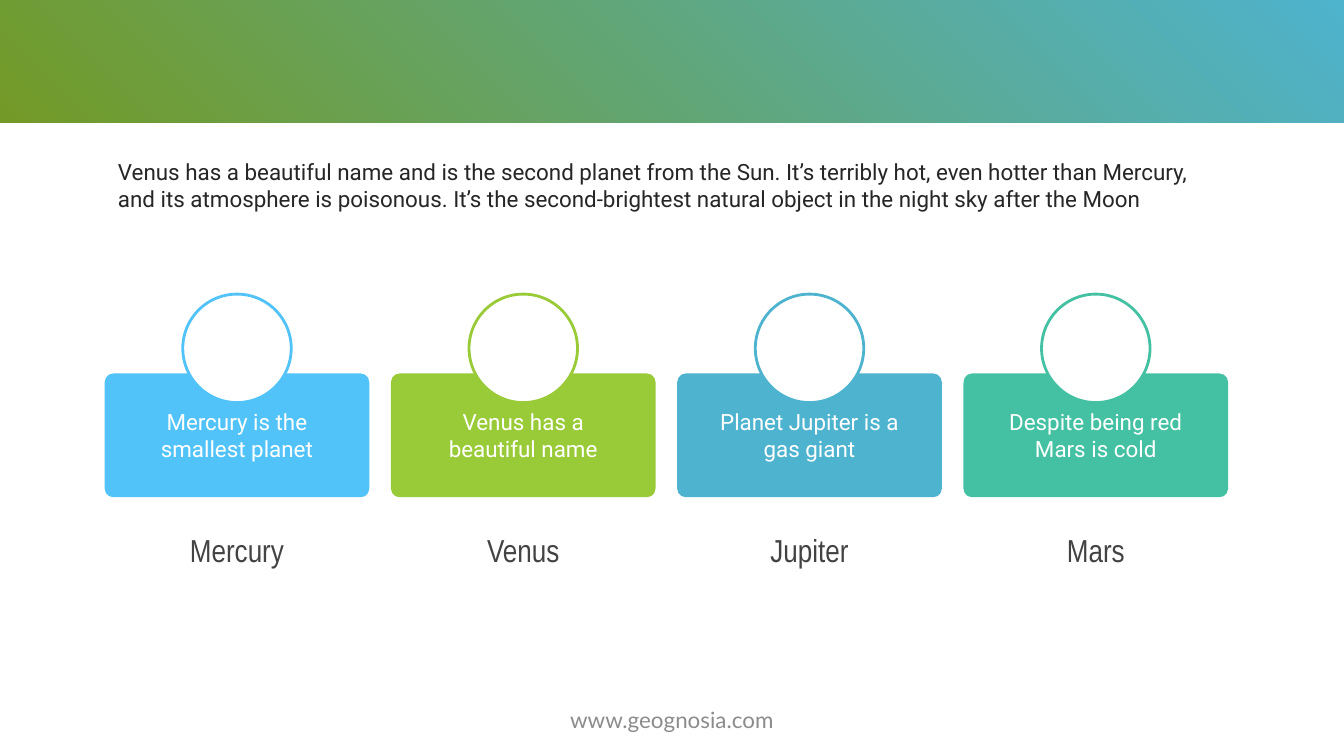
from pptx import Presentation
from pptx.dml.color import RGBColor
from pptx.enum import shapes, text
from pptx.util import Cm, Pt

WHITE = RGBColor(0xFF, 0xFF, 0xFF)
INK = RGBColor(0x26, 0x26, 0x26)
SLATE = RGBColor(0x43, 0x43, 0x43)
GREY = RGBColor(0x8C, 0x8C, 0x8C)
OLIVE = RGBColor(0x73, 0x9A, 0x28)
SKY = RGBColor(0x51, 0xC3, 0xF9)
LIME = RGBColor(0x99, 0xCB, 0x38)
BLUE = RGBColor(0x4E, 0xB3, 0xCF)
TEAL = RGBColor(0x44, 0xC1, 0xA3)

# Content
INTRO = ("Venus has a beautiful name and is the second planet from the Sun. "
         "It’s terribly hot, even hotter than Mercury, and its atmosphere is "
         "poisonous. It’s the second-brightest natural object in the night sky "
         "after the Moon")
PLANETS = [
    ("Mercury", "Mercury is the smallest planet", SKY),
    ("Venus", "Venus has a beautiful name", LIME),
    ("Jupiter", "Planet Jupiter is a gas giant", BLUE),
    ("Mars", "Despite being red Mars is cold", TEAL),
]
SITE = "www.geognosia.com"

# Text formats
BODY = dict(name="Roboto", size=Pt(12))
TITLE = dict(name="Arial Narrow", size=Pt(17))
FOOTER = dict(name="Lato", size=Pt(12))

# Layout in centimetres
LEFT, PITCH = 1.98, 5.41
CARD_W, CARD_H, CARD_TOP = 5, 2.34, 7.06
CIRCLE, CIRCLE_TOP = 2.05, 5.56
LABEL_W, LABEL_H, LABEL_TOP = 4.42, 1.19, 9.8

prs = Presentation()
prs.slide_width, prs.slide_height = Cm(25.4), Cm(14.29)
slide = prs.slides.add_slide(prs.slide_layouts[6])


def add_preset(preset, left, top, width, height):
    shape = slide.shapes.add_shape(preset, Cm(left), Cm(top), Cm(width), Cm(height))
    shape.shadow.inherit = False
    return shape


def write(shape, words, font, color, side=0.25, align=text.PP_ALIGN.CENTER):
    frame = shape.text_frame
    settings = dict(word_wrap=True, vertical_anchor=text.MSO_ANCHOR.MIDDLE,
                    margin_left=Cm(side), margin_right=Cm(side),
                    margin_top=Cm(0.25), margin_bottom=Cm(0.25))
    for key, value in settings.items():
        setattr(frame, key, value)
    paragraph = frame.paragraphs[0]
    paragraph.alignment = align
    run = paragraph.add_run()
    run.text = words
    for key, value in font.items():
        setattr(run.font, key, value)
    run.font.color.rgb = color


def add_text(words, left, top, width, height, font, color, **options):
    box = slide.shapes.add_textbox(Cm(left), Cm(top), Cm(width), Cm(height))
    write(box, words, font, color, **options)


# Gradient band, bleeding past the slide edges
band = add_preset(shapes.MSO_SHAPE.RECTANGLE, -0.1, -0.13, 25.6, 2.45)
band.line.fill.background()
band.fill.gradient()
band.fill.gradient_angle = 45
for stop, color, position in zip(band.fill.gradient_stops, (OLIVE, BLUE), (0.01, 1)):
    stop.color.rgb = color
    stop.position = position

# Planet columns: card, circle and name on one centre line
for column, (planet, fact, color) in enumerate(PLANETS):
    left = LEFT + column * PITCH
    center = left + CARD_W / 2

    card = add_preset(shapes.MSO_SHAPE.ROUNDED_RECTANGLE, left, CARD_TOP, CARD_W, CARD_H)
    card.adjustments[0] = 0.07
    card.fill.solid()
    card.fill.fore_color.rgb = color
    card.line.fill.background()
    write(card, fact, BODY, WHITE, side=0.5)

    circle = add_preset(shapes.MSO_SHAPE.OVAL, center - CIRCLE / 2, CIRCLE_TOP,
                        CIRCLE, CIRCLE)
    circle.fill.solid()
    circle.fill.fore_color.rgb = WHITE
    circle.line.color.rgb = color
    circle.line.width = Pt(1.5)

    add_text(planet, center - LABEL_W / 2, LABEL_TOP, LABEL_W, LABEL_H, TITLE, SLATE)

# Introduction and footer
add_text(INTRO, LEFT, 2.83, 21.45, 1.35, BODY, INK, align=text.PP_ALIGN.LEFT)
add_text(SITE, 8.41, 13.23, 8.58, 0.76, FOOTER, GREY)

prs.save("out.pptx")
